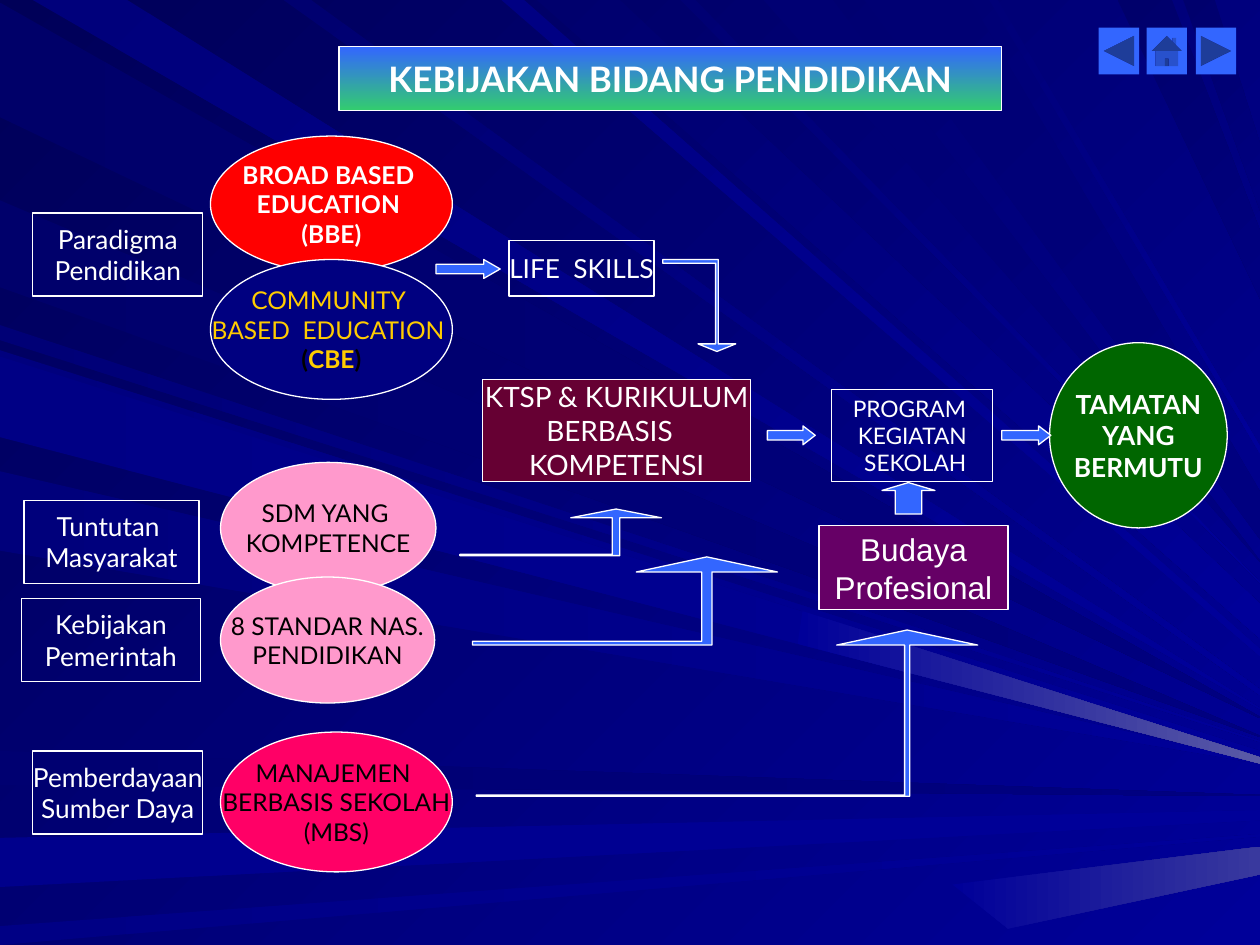
from pptx import Presentation
from pptx.util import Pt
from pptx.dml.color import RGBColor
from pptx.enum.shapes import MSO_SHAPE
from pptx.enum.text import MSO_ANCHOR, MSO_AUTO_SIZE, PP_ALIGN

PX = 9144  # EMU per px, 100 px to the inch
RECT, OVAL = MSO_SHAPE.RECTANGLE, MSO_SHAPE.OVAL
RIGHT, UP = MSO_SHAPE.RIGHT_ARROW, MSO_SHAPE.UP_ARROW
BACK = MSO_SHAPE.ACTION_BUTTON_BACK_OR_PREVIOUS
HOME = MSO_SHAPE.ACTION_BUTTON_HOME
NEXT = MSO_SHAPE.ACTION_BUTTON_FORWARD_OR_NEXT
CENTER = PP_ALIGN.CENTER
rgb = RGBColor.from_string
WHITE, BLACK, BLUE, YELLOW = "FFFFFF", "000000", "3366FF", "FFCC00"
FRAME = dict(margin_left=8 * PX, margin_right=8 * PX, margin_top=4 * PX, margin_bottom=4 * PX,
             word_wrap=False, auto_size=MSO_AUTO_SIZE.NONE, vertical_anchor=MSO_ANCHOR.MIDDLE)


def paint(sp, fill, line=WHITE):
    """fill: None, a hex colour, or (start, end, clockwise angle)."""
    if fill is None:
        sp.fill.background()
    elif isinstance(fill, str):
        sp.fill.solid()
        sp.fill.fore_color.rgb = rgb(fill)
    else:
        sp.fill.gradient()
        sp.fill.gradient_angle = (360 - fill[2]) % 360
        for stop, color in zip(sp.fill.gradient_stops, fill):
            stop.color.rgb = rgb(color)
    if line:
        sp.line.color.rgb = rgb(line)
        sp.line.width = Pt(0.75)
    else:
        sp.line.fill.background()
    sp.shadow.inherit = False


def write(sp, text, size, color, bold=False, font="Lato"):
    """One paragraph a line; in a line split by |, the outer parts are black."""
    tf = sp.text_frame
    for key, value in FRAME.items():
        setattr(tf, key, value)
    for i, line in enumerate(text.split("\n")):
        p = tf.paragraphs[0] if i == 0 else tf.add_paragraph()
        p.alignment = CENTER
        parts = line.split("|")
        mixed = len(parts) > 1
        for j, part in enumerate(parts):
            r = p.add_run()
            r.text = part
            for key, value in dict(name=font, size=Pt(size), bold=bold or mixed).items():
                setattr(r.font, key, value)
            r.font.color.rgb = rgb(BLACK if mixed and j % 2 == 0 else color)


prs = Presentation()
prs.slide_width, prs.slide_height = 1000 * PX, 750 * PX
s = prs.slides.add_slide(prs.slide_layouts[5])

# Background gradient
fill = s.background.fill
fill.gradient()
fill.gradient_angle = 315
for stop, color in zip(fill.gradient_stops, ("000058", "000099")):
    stop.color.rgb = rgb(color)

# Light rays from the left or top edge to the right edge:
# edge, two positions on it, two heights at the right, start and end shade of blue
RAYS = [
    ("left", 2, 93, 570, 569, "69", "80"),
    ("top", 26, 101, 562, 563, "7B", "99"),
    ("left", 596, 623, 632, 631, "71", "80"),
    ("left", 665, 704, 651, 643, "8C", "99"),
    ("left", 735, 750, 664, 662, "85", "99"),
    ("left", 258, 270, 589, 588, "76", "99"),
    ("left", 159, 228, 585, 584, "6B", "80"),
    ("top", 398, 416, 515, 521, "83", "99"),
    ("top", 426, 492, 479, 507, "6D", "99"),
    ("top", 540, 552, 462, 463, "73", "99"),
    ("top", 606, 661, 445, 446, "73", "80"),
    ("top", 887, 930, 183, 237, "6B", "80"),
    ("top", 939, 964, 114, 167, "6D", "80"),
    ("left", 278, 342, 602, 596, "7E", "99"),
    ("left", 374, 437, 606, 605, "7B", "99"),
    ("top", 225, 247, 547, 552, "70", "99"),
    ("top", 686, 770, 390, 428, "73", "80"),
    ("top", 785, 792, 354, 360, "78", "99"),
    ("left", 283, 347, 606, 601, "85", "99"),
]
outlines = []
for edge, a, b, c, d, start, end in RAYS:
    near = [(0, a), (0, b)] if edge == "left" else [(a, 0), (b, 0)]
    outlines.append((near + [(1000, c), (1000, d)],
                     ("0000" + start, "0000" + end, 0 if edge == "left" else 45)))
# Pale ends of two rays
outlines += [
    ([(637, 485), (633, 511), (1000, 606), (1000, 601)], ("000099", "5A5AA6", 0)),
    ([(756, 702), (800, 737), (1000, 694), (1000, 672)], ("000099", "39399E", 0)),
]
for points, fill in outlines:
    fb = s.shapes.build_freeform(*points[0], scale=PX)
    fb.add_line_segments(points[1:])
    paint(fb.convert_to_shape(), fill, None)

# Title, brought in front of the rays
title = s.shapes.title
title.left, title.top, title.width, title.height = [v * PX for v in (269, 37, 526, 51)]
paint(title, (BLUE, "33CD6E", 90))
write(title, "KEBIJAKAN BIDANG PENDIDIKAN", 20, WHITE, True)
tree = title._element.getparent()
tree.append(title._element)

# Ovals and boxes: kind, place, fill, text, size, colour, bold, font
BOXES = [
    (OVAL, (167, 108, 192, 108), "FF0000", "BROAD BASED \nEDUCATION \n(BBE)", 14, WHITE, True),
    (OVAL, (167, 206, 192, 111), "000080", "COMMUNITY \nBASED  EDUCATION \n(|CBE|)", 14, YELLOW),
    (OVAL, (175, 367, 171, 104), "FF99CC", "SDM YANG \nKOMPETENCE", 14, BLACK),
    (OVAL, (175, 458, 170, 100), "FF99CC", "8 STANDAR NAS.\nPENDIDIKAN", 14, BLACK),
    (OVAL, (175, 581, 184, 111), "FF0066", "MANAJEMEN \nBERBASIS SEKOLAH\n(MBS)", 14, BLACK),
    (RECT, (404, 191, 115, 44), None, "LIFE  SKILLS", 15, WHITE),
    (RECT, (383, 301, 213, 81), "660033", "KTSP & KURIKULUM\nBERBASIS  \nKOMPETENSI", 16, WHITE),
    (RECT, (660, 309, 128, 73), None, "PROGRAM \nKEGIATAN\n SEKOLAH", 13, WHITE),
    (RECT, (650, 417, 150, 67), "660066", "Budaya\nProfesional", 18, WHITE, False, "Arial"),
    (OVAL, (833, 272, 141, 147), "006600", "TAMATAN\nYANG\nBERMUTU", 15, WHITE, True),
]
# Labels at the left, all of one height: left, top, width, text
LABELS = [
    (26, 169, 135, "Paradigma\nPendidikan"),
    (19, 397, 139, "Tuntutan \nMasyarakat"),
    (17, 475, 142, "Kebijakan\nPemerintah"),
    (26, 596, 135, "Pemberdayaan\nSumber Daya"),
]
BOXES += [(RECT, (x, y, w, 66), None, text, 15, WHITE) for x, y, w, text in LABELS]
for kind, place, fill, *text in BOXES:
    sp = s.shapes.add_shape(kind, *[v * PX for v in place])
    paint(sp, fill)
    write(sp, *text)

# Bent arrows: tip, head half width and depth, shaft half width, tail end, outer edge, thickness
BENT = [
    (569, 279, 15, -6, 1, 526, 206, -3),
    (489, 404, 36, 7, 3, 365, 441, 1),
    (720, 500, 56, 12, 2, 378, 632, 1),
    (561, 442, 56, 12, 4, 375, 512, 3),
]
for x, y, head, depth, half, tail, outer, thick in BENT:
    neck, inner = y + depth, outer - thick
    fb = s.shapes.build_freeform(x, y, scale=PX)
    fb.add_line_segments([(x - head, neck), (x - half, neck), (x - half, inner), (tail, inner),
                          (tail, outer), (x + half, outer), (x + half, neck), (x + head, neck)])
    paint(fb.convert_to_shape(), BLUE)

# Straight arrows: kind, place, head length
ARROWS = [
    (RIGHT, (346, 206, 51, 15), 0.87),
    (RIGHT, (609, 338, 38, 15), 0.65),
    (RIGHT, (795, 338, 39, 15), 0.65),
    (UP, (700, 383, 42, 25), 0.25),
]
for kind, place, head in ARROWS:
    sp = s.shapes.add_shape(kind, *[v * PX for v in place])
    sp.adjustments[0], sp.adjustments[1] = 0.5, head
    paint(sp, BLUE)

# Navigation buttons
for x, kind in zip((872, 910, 949), (BACK, HOME, NEXT)):
    sp = s.shapes.add_shape(kind, *[v * PX for v in (x, 22, 32, 37)])
    paint(sp, BLUE, None)

prs.save("out.pptx")
